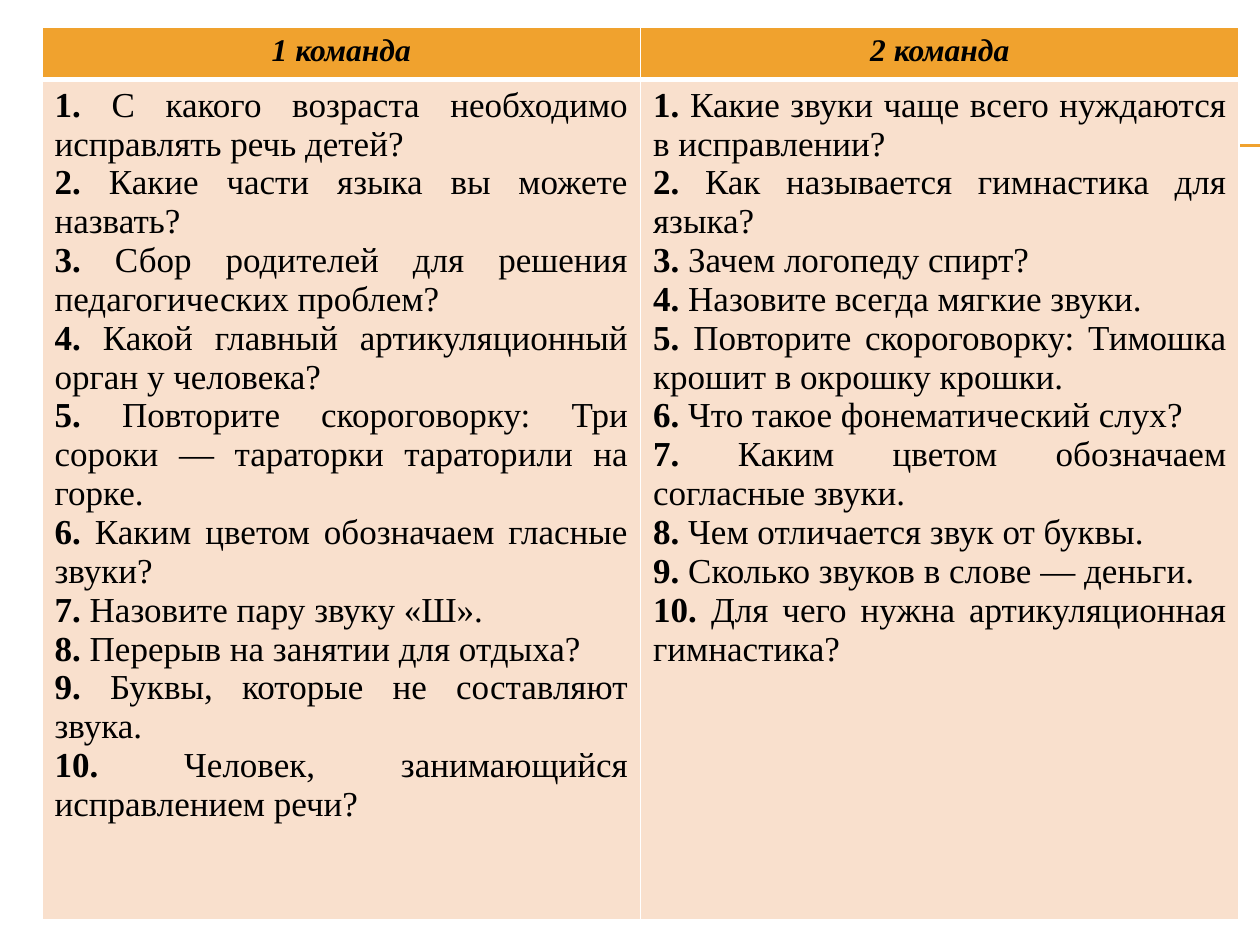
import pptx
import pptx.dml.color
import pptx.enum.shapes
import pptx.enum.text
import pptx.oxml
import pptx.oxml.ns
import pptx.util

Pt = pptx.util.Pt
ALIGN = pptx.enum.text.PP_ALIGN
COLORS = {"accent": "F0A22E", "body": "F9E0CD", "text": "000000", "border": "FFFFFF"}
FONT = "Times New Roman"

TEAMS = {
    "1 команда": [
        "С какого возраста необходимо исправлять речь детей?",
        "Какие части языка вы можете назвать?",
        "Сбор родителей для решения педагогических проблем?",
        "Какой главный артикуляционный орган у человека?",
        "Повторите скороговорку: Три сороки — тараторки тараторили на горке.",
        "Каким цветом обозначаем гласные звуки?",
        "Назовите пару звуку «Ш».",
        "Перерыв на занятии для отдыха?",
        "Буквы, которые не составляют звука.",
        "Человек, занимающийся исправлением речи?",
    ],
    "2 команда": [
        "Какие звуки чаще всего нуждаются в исправлении?",
        "Как называется гимнастика для языка?",
        "Зачем логопеду спирт?",
        "Назовите всегда мягкие звуки.",
        "Повторите скороговорку: Тимошка крошит в окрошку крошки.",
        "Что такое фонематический слух?",
        "Каким цветом обозначаем согласные звуки.",
        "Чем отличается звук от буквы.",
        "Сколько звуков в слове — деньги.",
        "Для чего нужна артикуляционная гимнастика?",
    ],
}


def rgb(name):
    return pptx.dml.color.RGBColor.from_string(COLORS[name])


def add_text(paragraph, text, size=20, bold=False, italic=False):
    run = paragraph.add_run()
    run.text = text
    run.font.name = FONT
    run.font.size = Pt(size)
    run.font.bold = bold
    run.font.italic = italic
    run.font.color.rgb = rgb("text")


def add_rule(slide, top):
    connector = slide.shapes.add_connector(
        pptx.enum.shapes.MSO_CONNECTOR.STRAIGHT, Pt(40), Pt(top), Pt(720), Pt(top)
    )
    connector.line.color.rgb = rgb("accent")
    connector.line.width = Pt(0.75)
    properties = connector._element.spPr
    properties.append(pptx.oxml.parse_xml(f"<a:effectLst {pptx.oxml.ns.nsdecls('a')}/>"))


def style_cell(cell, fill, top, bottom):
    properties = cell._tc.get_or_add_tcPr()
    for side, width in {"L": 1, "R": 1, "T": top, "B": bottom}.items():
        properties.append(pptx.oxml.parse_xml(
            f'<a:ln{side} {pptx.oxml.ns.nsdecls("a")} w="{Pt(width)}"><a:solidFill>'
            f'<a:srgbClr val="{COLORS["border"]}"/></a:solidFill></a:ln{side}>'
        ))
    cell.fill.solid()
    cell.fill.fore_color.rgb = rgb(fill)


def fill_header(cell, title):
    style_cell(cell, "accent", top=1, bottom=3)
    paragraph = cell.text_frame.paragraphs[0]
    paragraph.alignment = ALIGN.CENTER
    add_text(paragraph, title, size=18, bold=True, italic=True)


def fill_questions(cell, questions):
    style_cell(cell, "body", top=3, bottom=1)
    frame = cell.text_frame
    for number, question in enumerate(questions, 1):
        paragraph = frame.paragraphs[0] if number == 1 else frame.add_paragraph()
        paragraph.alignment = ALIGN.JUSTIFY
        add_text(paragraph, f"{number}. ", bold=True)
        add_text(paragraph, question)


def add_team_table(slide):
    table = slide.shapes.add_table(
        2, len(TEAMS), Pt(24), Pt(15.3), Pt(684), Pt(510.5)
    ).table
    table.rows[0].height = Pt(30.2)
    table.rows[1].height = Pt(480.3)
    for column, (title, questions) in enumerate(TEAMS.items()):
        fill_header(table.cell(0, column), title)
        fill_questions(table.cell(1, column), questions)


def main():
    presentation = pptx.Presentation()
    presentation.slide_width = Pt(720)
    presentation.slide_height = Pt(540)
    slide = presentation.slides.add_slide(presentation.slide_layouts[6])
    for top in (82.8, 83.5):
        add_rule(slide, top)
    add_team_table(slide)
    presentation.save("out.pptx")


if __name__ == "__main__":
    main()
